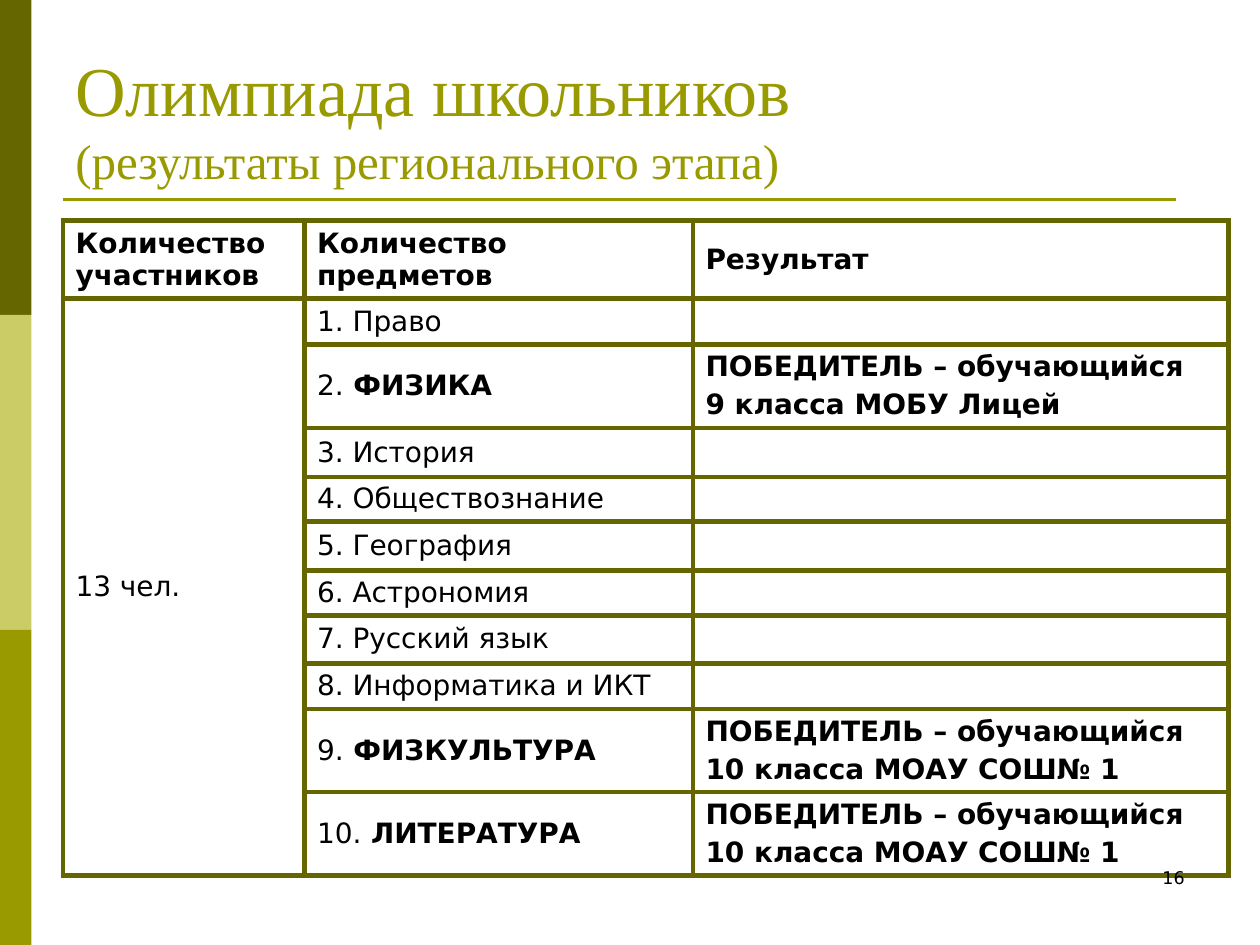
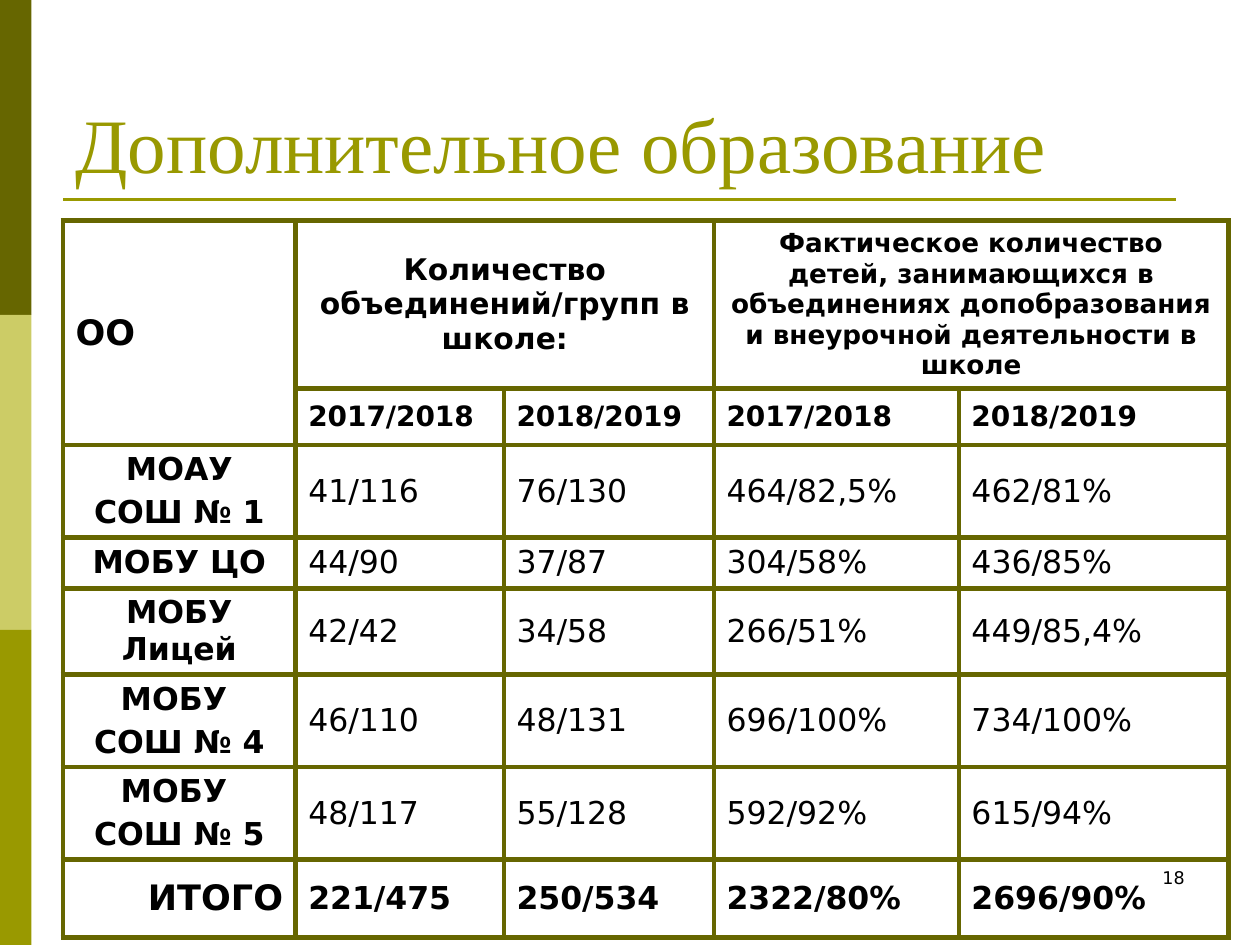
"""Builds two slides of school results tables in a shared olive frame."""
from lxml import etree
from pptx import Presentation
from pptx import util as u
from pptx.dml.color import RGBColor
from pptx.enum import shapes, text
from pptx.oxml.ns import qn

COLORS = {"dark": "666600", "light": "CCCC66", "olive": "999900", "ink": "000000"}
TITLE_FONT, BODY_FONT = "Times New Roman", "DejaVu Sans"
LEFT, CENTER, RIGHT = text.PP_ALIGN.LEFT, text.PP_ALIGN.CENTER, text.PP_ALIGN.RIGHT
BODY_SIZE = 16
BANDS = ["dark", "light", "olive"]
BAND_W, BAND_H = 18, 180
TABLE_X, TABLE_Y = 36, 126
CELL_PAD = 3

OLYMPIAD_TITLE = [("Олимпиада школьников", 40), ("(результаты регионального этапа)", 28)]
OLYMPIAD_HEAD = ["Количество участников", "Количество предметов", "Результат"]
PARTICIPANTS = "13 чел."
SUBJECTS = [
    ("Право", ""),
    ("ФИЗИКА", "9 класса МОБУ Лицей"),
    ("История", ""),
    ("Обществознание", ""),
    ("География", ""),
    ("Астрономия", ""),
    ("Русский язык", ""),
    ("Информатика и ИКТ", ""),
    ("ФИЗКУЛЬТУРА", "10 класса МОАУ СОШ№ 1"),
    ("ЛИТЕРАТУРА", "10 класса МОАУ СОШ№ 1"),
]
WINNER = "ПОБЕДИТЕЛЬ – обучающийся"
OLYMPIAD_COLS = [138, 222, 306]
OLYMPIAD_ROWS = [44.6, 26.3, 47.7, 28, 25.5, 27.9, 25.7, 27.4, 26.1, 47.5, 47.5]

CLUBS_TITLE = [("Дополнительное образование", 44)]
CLUBS_GROUPS = [
    ("Количество объединений/групп в школе:", 17),
    ("Фактическое количество детей, занимающихся в объединениях "
     "допобразования и внеурочной деятельности в школе", 15),
]
YEARS = ["2017/2018", "2018/2019"]
SCHOOLS = [
    (["МОАУ", "СОШ № 1"], ["41/116", "76/130", "464/82,5%", "462/81%"]),
    (["МОБУ ЦО"], ["44/90", "37/87", "304/58%", "436/85%"]),
    (["МОБУ Лицей"], ["42/42", "34/58", "266/51%", "449/85,4%"]),
    (["МОБУ ", "СОШ № 4"], ["46/110", "48/131", "696/100%", "734/100%"]),
    (["МОБУ ", "СОШ № 5"], ["48/117", "55/128", "592/92%", "615/94%"]),
]
TOTALS = ["221/475", "250/534", "2322/80%", "2696/90%"]
CLUBS_COLS = [133, 119, 120, 140, 154]
CLUBS_ROWS = [94.2, 32.4, 52.6, 29, 49.2, 53, 52.6, 44.6]


def rgb(name):
    return RGBColor.from_string(COLORS[name])


def add_run(p, words, size, font=BODY_FONT, color="ink", bold=False):
    r = p.add_run()
    r.text = words
    r.font.size, r.font.name, r.font.bold = u.Pt(size), font, bold
    r.font.color.rgb = rgb(color)


def add_box(s, x, y, w, h):
    tf = s.shapes.add_textbox(*map(u.Pt, (x, y, w, h))).text_frame
    tf.word_wrap = True
    return tf


def add_frame(prs, title):
    s = prs.slides.add_slide(prs.slide_layouts[6])
    for i, color in enumerate(BANDS):
        sp = s.shapes.add_shape(shapes.MSO_SHAPE.RECTANGLE, 0, u.Pt(i * BAND_H),
                                u.Pt(BAND_W), u.Pt(BAND_H))
        sp.shadow.inherit = False
        sp.fill.solid()
        sp.fill.fore_color.rgb = rgb(color)
        sp.line.fill.background()
    rule = s.shapes.add_connector(shapes.MSO_CONNECTOR.STRAIGHT,
                                  *map(u.Pt, (36, 114, 672, 114)))
    rule.line.color.rgb = rgb("olive")
    rule.line.width = u.Pt(1.5)
    etree.SubElement(rule._element.spPr, qn("a:effectLst"))
    tf = add_box(s, 36, 21.6, 648, 90)
    tf.vertical_anchor = text.MSO_ANCHOR.BOTTOM
    p = tf.paragraphs[0]
    for i, (words, size) in enumerate(title):
        if i:
            p.add_line_break()
        add_run(p, words, size, TITLE_FONT, "olive")
    return s


def add_number(s, number):
    p = add_box(s, 516, 492, 168, 36).paragraphs[0]
    p.alignment = RIGHT
    add_run(p, str(number), 10)


def add_grid(s, cols, rows):
    frame = s.shapes.add_table(len(rows), len(cols), u.Pt(TABLE_X), u.Pt(TABLE_Y),
                               u.Pt(sum(cols)), u.Pt(sum(rows)))
    table = frame.table
    table.first_row = table.horz_banding = False
    for col, width in zip(table.columns, cols):
        col.width = u.Pt(width)
    for row, height in zip(table.rows, rows):
        row.height = u.Pt(height)
    for cell in table.iter_cells():
        tc_pr = cell._tc.get_or_add_tcPr()
        for side in ("lnL", "lnR", "lnT", "lnB"):
            ln = etree.SubElement(tc_pr, qn("a:" + side), w=str(u.Pt(3)))
            fill = etree.SubElement(ln, qn("a:solidFill"))
            etree.SubElement(fill, qn("a:srgbClr"), val=COLORS["dark"])
        cell.fill.background()
        cell.vertical_anchor = text.MSO_ANCHOR.MIDDLE
        cell.margin_top = cell.margin_bottom = u.Pt(CELL_PAD)
        end = etree.SubElement(cell.text_frame.paragraphs[0]._p, qn("a:endParaRPr"))
        end.set("sz", str(BODY_SIZE * 100))
    return table


def write(cell, paragraphs, size=BODY_SIZE, bold=False, align=LEFT):
    """Fills a cell; a paragraph is a string or a list of (words, bold) runs."""
    tf = cell.text_frame
    for i, runs in enumerate(paragraphs):
        p = tf.add_paragraph() if i else tf.paragraphs[0]
        p.alignment = align
        before = etree.SubElement(p._p.get_or_add_pPr(), qn("a:spcBef"))
        etree.SubElement(before, qn("a:spcPct"), val="20000")
        for words, strong in [(runs, bold)] if isinstance(runs, str) else runs:
            add_run(p, words, size, bold=strong)


def build_olympiad(prs):
    s = add_frame(prs, OLYMPIAD_TITLE)
    table = add_grid(s, OLYMPIAD_COLS, OLYMPIAD_ROWS)
    table.cell(1, 0).merge(table.cell(len(SUBJECTS), 0))
    for c, head in enumerate(OLYMPIAD_HEAD):
        write(table.cell(0, c), [head], bold=True)
    write(table.cell(1, 0), [PARTICIPANTS])
    for n, (subject, result) in enumerate(SUBJECTS, 1):
        write(table.cell(n, 1), [[(f"{n}.", False), (f" {subject}", bool(result))]])
        if result:
            write(table.cell(n, 2), [WINNER, result], bold=True)
    add_number(s, 16)


def build_clubs(prs):
    s = add_frame(prs, CLUBS_TITLE)
    table = add_grid(s, CLUBS_COLS, CLUBS_ROWS)
    table.cell(0, 0).merge(table.cell(1, 0))
    write(table.cell(0, 0), ["ОО"], 20, True)
    for g, (group, size) in enumerate(CLUBS_GROUPS):
        first = 1 + g * len(YEARS)
        table.cell(0, first).merge(table.cell(0, first + 1))
        write(table.cell(0, first), [group], size, True, CENTER)
        for y, year in enumerate(YEARS):
            write(table.cell(1, first + y), [year], bold=True)
    for r, (school, values) in enumerate(SCHOOLS, 2):
        write(table.cell(r, 0), school, 18, True, CENTER)
        for c, value in enumerate(values, 1):
            write(table.cell(r, c), [value], 18)
    last = len(CLUBS_ROWS) - 1
    write(table.cell(last, 0), ["ИТОГО"], 20, True, RIGHT)
    for c, total in enumerate(TOTALS, 1):
        write(table.cell(last, c), [total], 18, True)
    add_number(s, 18)


def main():
    prs = Presentation()
    prs.slide_width, prs.slide_height = u.Pt(720), u.Pt(540)
    build_olympiad(prs)
    build_clubs(prs)
    prs.save("out.pptx")


if __name__ == "__main__":
    main()
